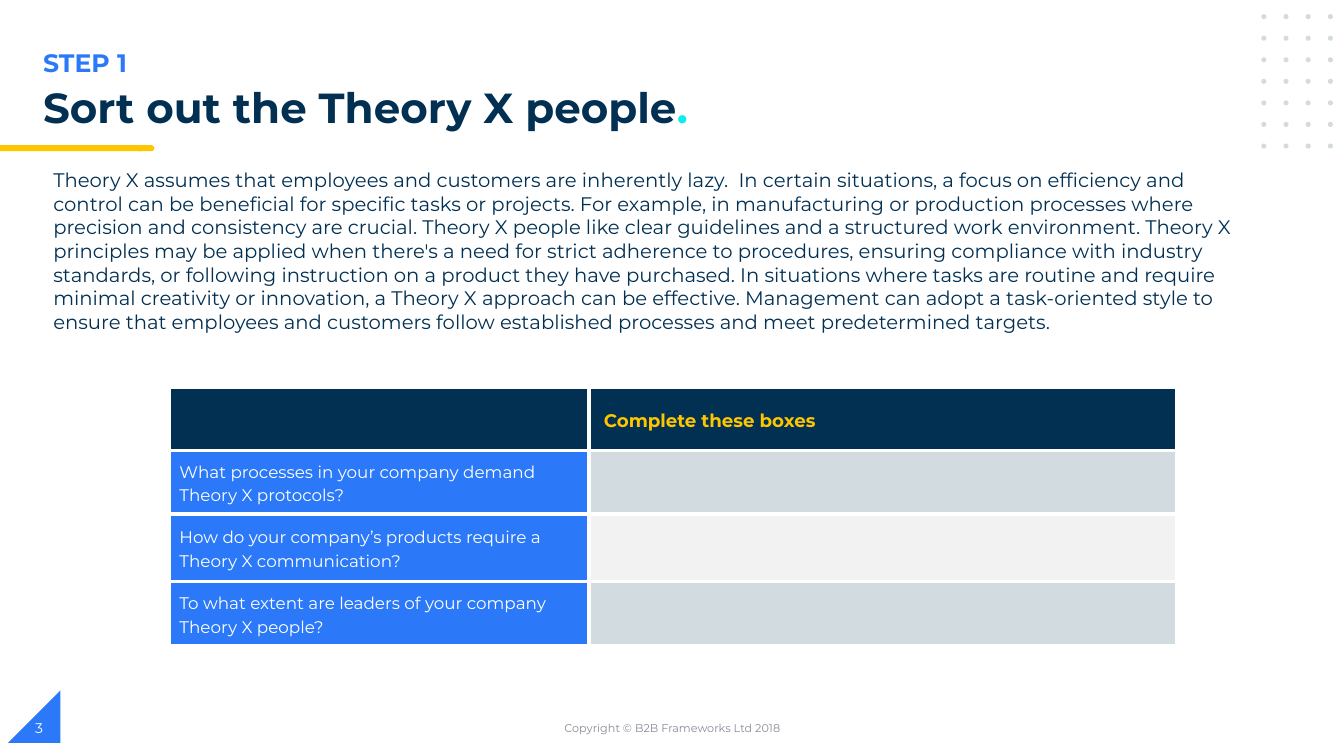
from dataclasses import dataclass

from lxml import etree
from pptx import Presentation
from pptx import util as u
from pptx.dml.color import RGBColor
from pptx.enum import shapes, text
from pptx.oxml import ns

STEP = "STEP 1"
TITLE = "Sort out the Theory X people"
TITLE_END = "."
BODY = [
    "Theory X assumes that employees and customers are inherently lazy.  In certain situations, "
    "a focus on efficiency and control can be beneficial for specific tasks or projects.",
    "For example, in manufacturing or production processes where precision and consistency are "
    "crucial.",
    "Theory X people like clear guidelines and a structured work environment.",
    "Theory X principles may be applied when there's a need for strict adherence to procedures, "
    "ensuring compliance with industry standards, or following instruction on a product they "
    "have purchased.",
    "In situations where tasks are routine and require minimal creativity or innovation, "
    "a Theory X approach can be effective.",
    "Management can adopt a task-oriented style to ensure that employees and customers follow "
    "established processes and meet predetermined targets.",
]
HEADING = "Complete these boxes"
QUESTIONS = [
    "What processes in your company demand Theory X protocols?",
    "How do your company’s products require a Theory X communication?",
    "To what extent are leaders of your company Theory X people?",
]
COPYRIGHT = "Copyright © B2B Frameworks Ltd 2018"
PAGE_NUMBER = "3"

PAGE_SIZE = (1333, 750)
TABLE_AT = (168, 384)
COLUMNS = [416, 583]
ROWS = [63, 63, 67, 64]
DOTS_AT = (1251, 14)
DOT_PITCH = (22, 21.4)
DOT_COUNT = (4, 7)
DOT_SIZE = 5


@dataclass(frozen=True)
class Theme:
    font: str = "Montserrat"
    navy: str = "023053"
    blue: str = "2B79F8"
    cyan: str = "0EECEC"
    yellow: str = "FFC600"
    mist: str = "D1DBE0"
    pale: str = "F2F2F2"
    grey: str = "888C97"
    white: str = "FFFFFF"
    title: int = 30
    step: int = 18
    body: int = 14
    heading: int = 13
    question: int = 12
    number: int = 10
    footer: int = 8
    border: int = 3


THEME = Theme()


def px(length):
    return u.Emu(round(length * 9144))


def paint(fill, color):
    fill.solid()
    fill.fore_color.rgb = RGBColor.from_string(color)


def style(font, size, color, bold=False):
    font.name = THEME.font
    font.size = u.Pt(size)
    font.bold = bold
    font.color.rgb = RGBColor.from_string(color)


def add_solid(parent, kind, area, color):
    shape = parent.shapes.add_shape(kind, *map(px, area))
    shape.shadow.inherit = False
    paint(shape.fill, color)
    shape.line.fill.background()
    return shape


def add_text(page, area, content, size, color, bold=False,
             anchor=text.MSO_ANCHOR.TOP, align=text.PP_ALIGN.LEFT):
    box = page.shapes.add_textbox(*map(px, area))
    frame = box.text_frame
    frame.word_wrap = True
    frame.vertical_anchor = anchor
    para = frame.paragraphs[0]
    para.alignment = align
    para.add_run().text = content
    style(para.font, size, color, bold)
    return para


def add_decoration(page):
    kinds = shapes.MSO_SHAPE
    corner = add_solid(page, kinds.RIGHT_TRIANGLE, (8, 685, 52, 52), THEME.blue)
    corner.element.spPr.xfrm.set("flipH", "1")
    underline = page.shapes.add_group_shape()
    add_solid(underline, kinds.FLOWCHART_TERMINATOR, (134, 144, 19, 6), THEME.yellow)
    add_solid(underline, kinds.RECTANGLE, (0, 144, 141, 6), THEME.yellow)
    dots = page.shapes.add_group_shape()
    for row in range(DOT_COUNT[1]):
        for column in range(DOT_COUNT[0]):
            left = DOTS_AT[0] + column * DOT_PITCH[0]
            top = DOTS_AT[1] + row * DOT_PITCH[1]
            add_solid(dots, kinds.OVAL, (left, top, DOT_SIZE, DOT_SIZE), THEME.mist)


def add_borders(cell):
    properties = cell._tc.get_or_add_tcPr()
    for side in ("a:lnL", "a:lnR", "a:lnT", "a:lnB"):
        line = etree.SubElement(properties, ns.qn(side), w=str(int(u.Pt(THEME.border))))
        fill = etree.SubElement(line, ns.qn("a:solidFill"))
        etree.SubElement(fill, ns.qn("a:srgbClr"), val=THEME.white)


def fill_cell(cell, content, fill, size, color, bold, indent):
    add_borders(cell)
    paint(cell.fill, fill)
    cell.vertical_anchor = text.MSO_ANCHOR.MIDDLE
    cell.margin_left, cell.margin_right = px(indent), px(10)
    cell.margin_top = cell.margin_bottom = 0
    para = cell.text_frame.paragraphs[0]
    para.line_spacing = 1.15
    if content:
        para.add_run().text = content
    style(para.font, size, color, bold)


def add_questions(page):
    area = (*TABLE_AT, sum(COLUMNS), sum(ROWS))
    table = page.shapes.add_table(len(ROWS), len(COLUMNS), *map(px, area)).table
    table.first_row = table.horz_banding = False
    for column, width in zip(table.columns, COLUMNS):
        column.width = px(width)
    for row, height in zip(table.rows, ROWS):
        row.height = px(height)
    for column, content in enumerate(["", HEADING]):
        fill_cell(table.cell(0, column), content, THEME.navy,
                  THEME.heading, THEME.yellow, True, 15)
    for row, question in enumerate(QUESTIONS, 1):
        answer_fill = THEME.mist if row % 2 else THEME.pale
        for column, (content, fill) in enumerate([(question, THEME.blue), ("", answer_fill)]):
            fill_cell(table.cell(row, column), content, fill,
                      THEME.question, THEME.white, False, 10)


def main():
    deck = Presentation()
    deck.slide_width, deck.slide_height = map(px, PAGE_SIZE)
    page = deck.slides.add_slide(deck.slide_layouts[6])
    paint(page.background.fill, THEME.white)
    middle = text.MSO_ANCHOR.MIDDLE

    add_decoration(page)
    add_text(page, (33, 42, 669, 40), STEP, THEME.step, THEME.blue, True)
    add_text(page, (442, 702, 450, 40), COPYRIGHT, THEME.footer, THEME.grey,
             anchor=middle, align=text.PP_ALIGN.CENTER)
    add_text(page, (25, 702, 300, 40), PAGE_NUMBER, THEME.number, THEME.white, anchor=middle)
    title = add_text(page, (33, 82, 892, 40), TITLE, THEME.title, THEME.navy, True)
    title.line_spacing = 0.9
    span = title.add_run()
    span.text = TITLE_END
    span.font.color.rgb = RGBColor.from_string(THEME.cyan)
    add_questions(page)
    add_text(page, (43, 162, 1191, 175), " ".join(BODY), THEME.body, THEME.navy)

    deck.save("out.pptx")


if __name__ == "__main__":
    main()
